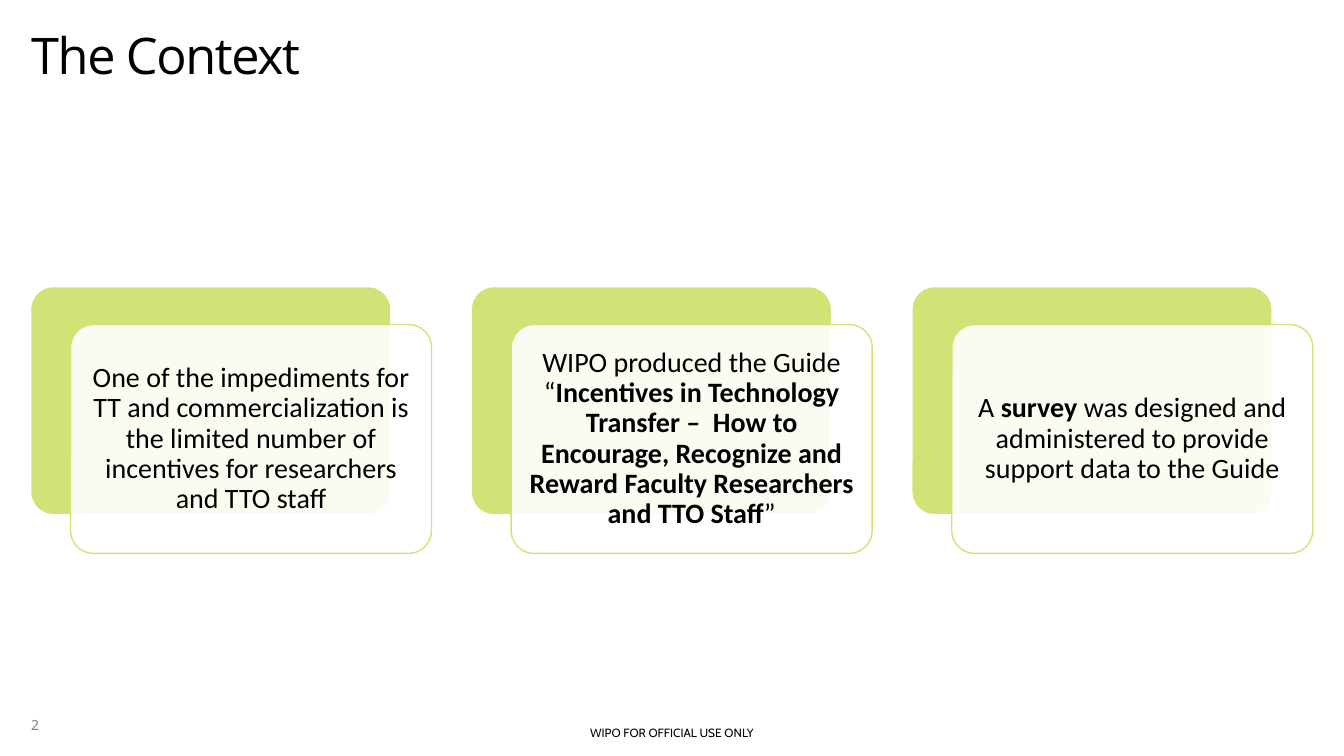
from lxml.etree import SubElement
from pptx import Presentation
from pptx.dml.color import RGBColor
from pptx.enum.shapes import MSO_SHAPE as Shape
from pptx.enum.text import MSO_ANCHOR as Anchor, PP_ALIGN as Align
from pptx.oxml.ns import qn
from pptx.util import Inches, Pt

GREEN, WHITE, BLACK, GREY = "D3E276", "FFFFFF", "000000", "808080"

# Each card is a list of (text, bold) spans
CARDS = [
    [("One of the impediments for TT and commercialization is the limited "
      "number of incentives for researchers and TTO staff", False)],
    [("WIPO produced the Guide “", False),
     ("Incentives in Technology Transfer –  How to Encourage, Recognize and "
      "Reward Faculty Researchers and TTO Staff", True),
     ("”", False)],
    [("A ", False), ("survey", True),
     (" was designed and administered to provide support data to the Guide", False)],
]


def color(value):
    return RGBColor.from_string(value)


def set_font(para, name, size, value):
    para.font.name = name
    para.font.size = Pt(size)
    para.font.color.rgb = color(value)


def set_insets(frame, inset):
    frame.margin_left = frame.margin_right = Inches(inset)
    frame.margin_top = frame.margin_bottom = Inches(inset)


def add_label(page, box, text, font, anchor=Anchor.TOP, align=Align.LEFT, inset=0):
    frame = page.shapes.add_textbox(*map(Inches, box)).text_frame
    frame.word_wrap = True
    frame.vertical_anchor = anchor
    set_insets(frame, inset)
    para = frame.paragraphs[0]
    para.alignment = align
    span = para.add_run()
    span.text = text
    set_font(para, *font)
    return para


def add_title(page, box):
    para = add_label(page, box, "The Context", ("Open Sans", 36, BLACK))
    para.line_spacing = 0.9
    para.runs[0].font._element.set("spc", "-100")


def add_panel(page, box, fill, line, width):
    panel = page.shapes.add_shape(Shape.ROUNDED_RECTANGLE, *map(Inches, box))
    panel.adjustments[0] = 0.1
    panel.shadow.inherit = False
    panel.fill.solid()
    panel.fill.fore_color.rgb = color(fill)
    panel.line.color.rgb = color(line)
    panel.line.width = Pt(width)
    return panel


def add_card(page, box, spans):
    left, top, width, height = box
    # Green panel behind, translucent white panel shifted down and right
    add_panel(page, box, GREEN, WHITE, 1.5)
    front = add_panel(page, (left + 0.4, top + 0.38, width, height), WHITE, GREEN, 1)
    fill_color = front._element.spPr.find(qn("a:solidFill"))[0]
    SubElement(fill_color, qn("a:alpha"), val="90000")

    # Text of the front panel
    frame = front.text_frame
    frame.word_wrap = True
    frame.vertical_anchor = Anchor.MIDDLE
    set_insets(frame, 0.08)
    para = frame.paragraphs[0]
    para.alignment = Align.CENTER
    para.line_spacing = 0.9
    for text, bold in spans:
        span = para.add_run()
        span.text = text
        span.font.bold = bold
    set_font(para, "Calibri", 20, BLACK)


def add_footer(page, box):
    left, top, width, height = box
    add_label(page, (left, top + 0.27, width, 0.24), "WIPO FOR OFFICIAL USE ONLY",
              ("Cabin", 8.5, BLACK), align=Align.CENTER, inset=0.05)
    add_label(page, (left + 0.31, top, 1.21, 0.4), "2",
              ("Noto Sans", 10, GREY), anchor=Anchor.BOTTOM)


def main():
    deck = Presentation()
    deck.slide_width, deck.slide_height = Inches(13.33), Inches(7.5)
    page = deck.slides.add_slide(deck.slide_layouts[6])
    add_footer(page, (0, 6.88, 13.33, 0.51))
    add_title(page, (0.31, 0.31, 12.52, 1.41))
    for index, spans in enumerate(CARDS):
        add_card(page, (0.3 + 4.37 * index, 2.84, 3.58, 2.27), spans)
    deck.save("out.pptx")


if __name__ == "__main__":
    main()
